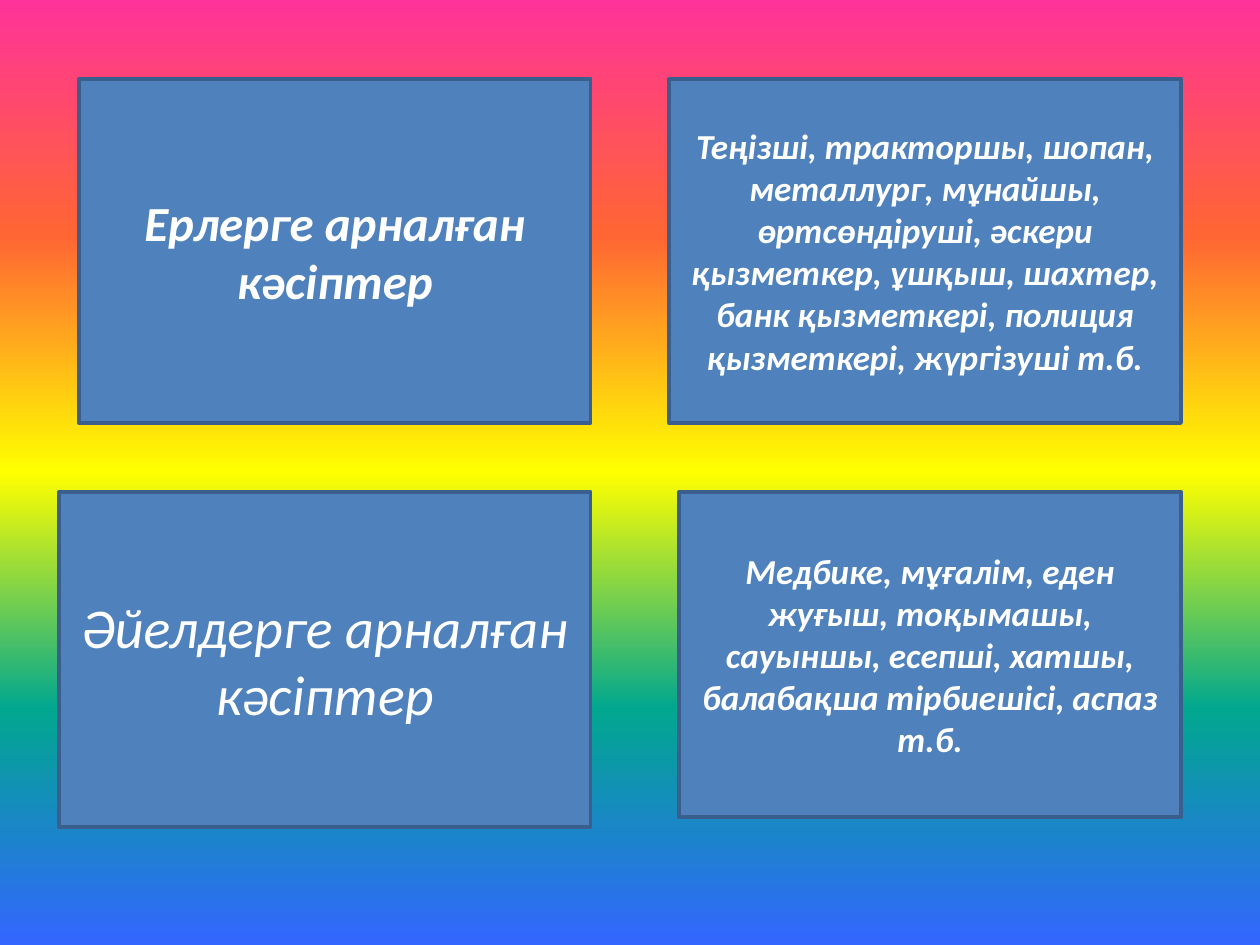
from lxml import etree
from pptx import Presentation
from pptx import util as u
from pptx.dml.color import RGBColor
from pptx.enum import shapes, text
from pptx.oxml.ns import qn

COLORS = {
    "box": "4F81BD",
    "border": "3A5F8C",
    "text": "FFFFFF",
    "pink": "FF3399",
    "orange": "FF6633",
    "yellow": "FFFF00",
    "green": "01A78F",
    "blue": "3366FF",
}
RAINBOW = ["pink", "orange", "yellow", "green", "blue"]
RIGHT_EDGES = {"label": 11.91, "list": 23.81}
TOPS = {"men": 1.59, "women": 9.92}


def rgb(name):
    return RGBColor.from_string(COLORS[name])


def write_text(tf, content, size=20, bold=True, italic=True, color="text", font="Calibri"):
    tf.word_wrap = True
    tf.vertical_anchor = text.MSO_ANCHOR.MIDDLE
    p = tf.paragraphs[0]
    p.alignment = text.PP_ALIGN.CENTER
    r = p.add_run()
    r.text = content
    r.font.name = font
    r.font.size = u.Pt(size)
    r.font.bold = bold
    r.font.italic = italic
    r.font.color.rgb = rgb(color)


class Deck:
    def __init__(self, prs):
        self.s = prs.slides.add_slide(prs.slide_layouts[6])
        self.line_width = u.Pt(2)

    def background(self, names):
        fill = self.s.background.fill
        fill.gradient()
        fill.gradient_angle = 270
        stops = self.s.element.find(".//" + qn("a:gsLst"))
        for stop in list(stops):
            stops.remove(stop)
        for i, name in enumerate(names):
            pos = 100000 * i // (len(names) - 1)
            gs = etree.SubElement(stops, qn("a:gs"), pos=str(pos))
            etree.SubElement(gs, qn("a:srgbClr"), val=COLORS[name])

    def box(self, column, row, width, height, content, **fmt):
        left = RIGHT_EDGES[column] - width
        sp = self.s.shapes.add_shape(
            shapes.MSO_SHAPE.RECTANGLE,
            u.Cm(left), u.Cm(TOPS[row]), u.Cm(width), u.Cm(height),
        )
        sp.shadow.inherit = False
        sp.fill.solid()
        sp.fill.fore_color.rgb = rgb("box")
        sp.line.color.rgb = rgb("border")
        sp.line.width = self.line_width
        write_text(sp.text_frame, content, **fmt)


def main():
    prs = Presentation()
    prs.slide_width, prs.slide_height = u.Cm(25.4), u.Cm(19.05)
    deck = Deck(prs)
    deck.background(RAINBOW)
    deck.box("label", "men", 10.32, 6.94, "Ерлерге арналған кәсіптер", size=28)
    deck.box("list", "men", 10.32, 6.94,
             "Теңізші, тракторшы, шопан, металлург, мұнайшы, өртсөндіруші, "
             "әскери қызметкер, ұшқыш, шахтер, банк қызметкері, "
             "полиция қызметкері, жүргізуші т.б.")
    deck.box("label", "women", 10.72, 6.75, "Әйелдерге арналған кәсіптер",
             size=32, bold=False)
    deck.box("list", "women", 10.12, 6.55,
             "Медбике, мұғалім, еден жуғыш, тоқымашы, сауыншы, есепші, "
             "хатшы, балабақша тірбиешісі, аспаз т.б.")
    prs.save("out.pptx")


if __name__ == "__main__":
    main()
